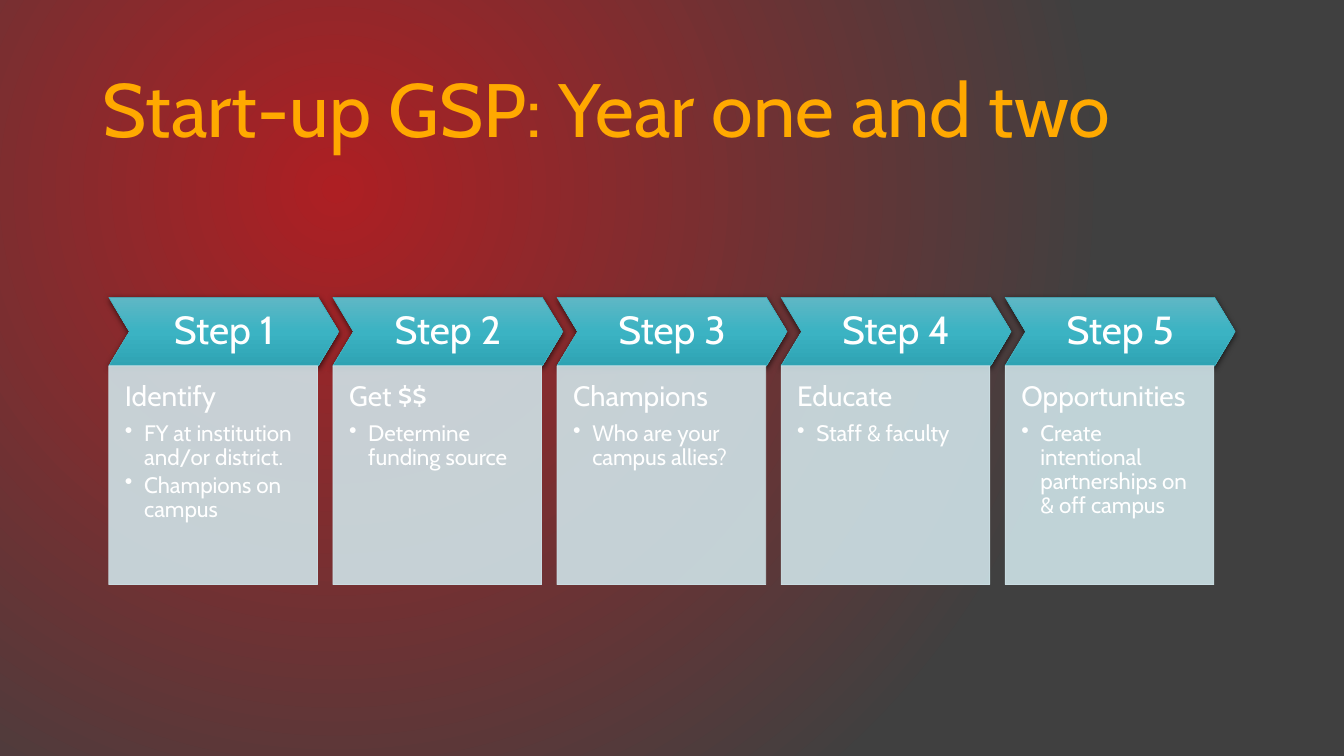
from dataclasses import dataclass

import pptx
import pptx.dml.color
import pptx.enum.shapes
import pptx.enum.text
import pptx.oxml
import pptx.oxml.ns
import pptx.util
from lxml import etree

Inches = pptx.util.Inches
Pt = pptx.util.Pt
qn = pptx.oxml.ns.qn
Shapes = pptx.enum.shapes.MSO_SHAPE
Anchor = pptx.enum.text.MSO_ANCHOR
Align = pptx.enum.text.PP_ALIGN


@dataclass(frozen=True)
class Theme:
    font: str = "Cabin"
    backdrop: tuple = ((0, "AD1F23"), (100, "404040"))
    arrow: tuple = ((0, "5FB7C5"), (50, "3BB3C3"), (100, "2FA3B3"))
    arrow_line: str = "41AEBD"
    card: str = "CFE3E8"
    title: str = "FFA900"
    text: str = "FFFFFF"
    title_size: int = 54
    step_size: int = 28
    heading_size: int = 20
    bullet_size: int = 16


@dataclass(frozen=True)
class Box:
    left: float
    top: float
    width: float
    height: float

    def lengths(self):
        return [Inches(side) for side in (self.left, self.top, self.width, self.height)]


THEME = Theme()
STEPS = [
    ("Identify", ["FY at institution and/or district.", "Champions on campus"]),
    ("Get $$", ["Determine funding source"]),
    ("Champions", ["Who are your campus allies?"]),
    ("Educate", ["Staff & faculty"]),
    ("Opportunities", ["Create intentional partnerships on & off campus"]),
]


def color(value):
    return pptx.dml.color.RGBColor.from_string(value)


def add_child(parent, tag, **attributes):
    return etree.SubElement(parent, qn(tag), {key: str(value) for key, value in attributes.items()})


def set_gradient(fill, owner, stops, radial=False):
    fill.gradient()
    gradient = next(owner.iter(qn("a:gradFill")))
    for child in list(gradient):
        gradient.remove(child)
    stop_list = add_child(gradient, "a:gsLst")
    for position, value in stops:
        add_child(add_child(stop_list, "a:gs", pos=position * 1000), "a:srgbClr", val=value)
    if radial:
        circle = add_child(gradient, "a:path", path="circle")
        add_child(circle, "a:fillToRect", l=50000, t=50000, r=100000, b=100000)
    else:
        add_child(gradient, "a:lin", ang=5400000, scaled=0)


def add_shadow(shape):
    effects = shape._element.spPr.find(qn("a:effectLst"))
    shadow = add_child(effects, "a:outerShdw", blurRad=Pt(4.5), dist=Pt(1.5),
                       dir=5400000, algn="ctr", rotWithShape=0)
    add_child(add_child(shadow, "a:srgbClr", val="000000"), "a:alpha", val=63000)


def format_paragraph(para, text, size, value, align=Align.LEFT, after=0, bullet=False):
    para.text = text
    para.alignment = align
    para.line_spacing = 0.9
    properties = para._p.get_or_add_pPr()
    add_child(add_child(properties, "a:spcAft"), "a:spcPct", val=after * 1000)
    if bullet:
        para.level = 1
        properties.set("marL", str(Inches(0.19)))
        properties.set("indent", str(Inches(-0.19)))
        add_child(properties, "a:buChar", char="•")
    para.font.name = THEME.font
    para.font.size = Pt(size)
    para.font.color.rgb = color(value)


def add_panel(group, kind, box, line, anchor, insets):
    shape = group.shapes.add_shape(kind, *box.lengths())
    shape.shadow.inherit = False
    shape.line.color.rgb = color(line)
    shape.line.width = Pt(0.5)
    frame = shape.text_frame
    frame.word_wrap = True
    frame.vertical_anchor = anchor
    frame.margin_left, frame.margin_top, frame.margin_right, frame.margin_bottom = map(Inches, insets)
    return shape


def add_arrow(group, box, label):
    arrow = add_panel(group, Shapes.CHEVRON, box, THEME.arrow_line, Anchor.MIDDLE, [0.08] * 4)
    arrow.adjustments[0] = 0.3
    set_gradient(arrow.fill, arrow._element.spPr, THEME.arrow)
    add_shadow(arrow)
    format_paragraph(arrow.text_frame.paragraphs[0], label, THEME.step_size, THEME.text,
                     Align.CENTER, after=35)


def add_card(group, box, heading, bullets):
    card = add_panel(group, Shapes.RECTANGLE, box, THEME.card, Anchor.TOP, [0.16, 0.16, 0.16, 0.33])
    card.fill.solid()
    card.fill.fore_color.rgb = color(THEME.card)
    for tint in list(card._element.spPr.iter(qn("a:srgbClr"))):
        add_child(tint, "a:alpha", val=90000)
    frame = card.text_frame
    format_paragraph(frame.paragraphs[0], heading, THEME.heading_size, THEME.text, after=35)
    for bullet in bullets:
        format_paragraph(frame.add_paragraph(), bullet, THEME.bullet_size, THEME.text,
                         after=15, bullet=True)


def add_steps(page, box):
    group = page.shapes.add_group_shape()
    arrow_width, arrow_height, card_width = 2.28, 0.68, 2.07
    pitch = (box.width - arrow_width) / (len(STEPS) - 1)
    for index, (heading, bullets) in enumerate(STEPS):
        left = box.left + index * pitch
        add_arrow(group, Box(left, box.top, arrow_width, arrow_height), f"Step {index + 1}")
        card_box = Box(left, box.top + arrow_height, card_width, box.height - arrow_height)
        add_card(group, card_box, heading, bullets)


def add_title(page, box, text):
    title = page.shapes.title
    title.left, title.top, title.width, title.height = box.lengths()
    frame = title.text_frame
    frame.word_wrap = True
    frame.auto_size = pptx.enum.text.MSO_AUTO_SIZE.NONE
    frame.vertical_anchor = Anchor.MIDDLE
    format_paragraph(frame.paragraphs[0], text, THEME.title_size, THEME.title)


def add_process_slide(deck):
    page = deck.slides.add_slide(deck.slide_layouts[5])
    set_gradient(page.background.fill, page._element, THEME.backdrop, radial=True)
    add_title(page, Box(0.92, 0.4, 11.5, 1.45), "Start-up GSP: Year one and two")
    add_steps(page, Box(1.08, 2.95, 11.17, 2.85))


def main():
    deck = pptx.Presentation()
    deck.slide_width = Inches(13.33)
    deck.slide_height = Inches(7.5)
    add_process_slide(deck)
    deck.save("out.pptx")


if __name__ == "__main__":
    main()
